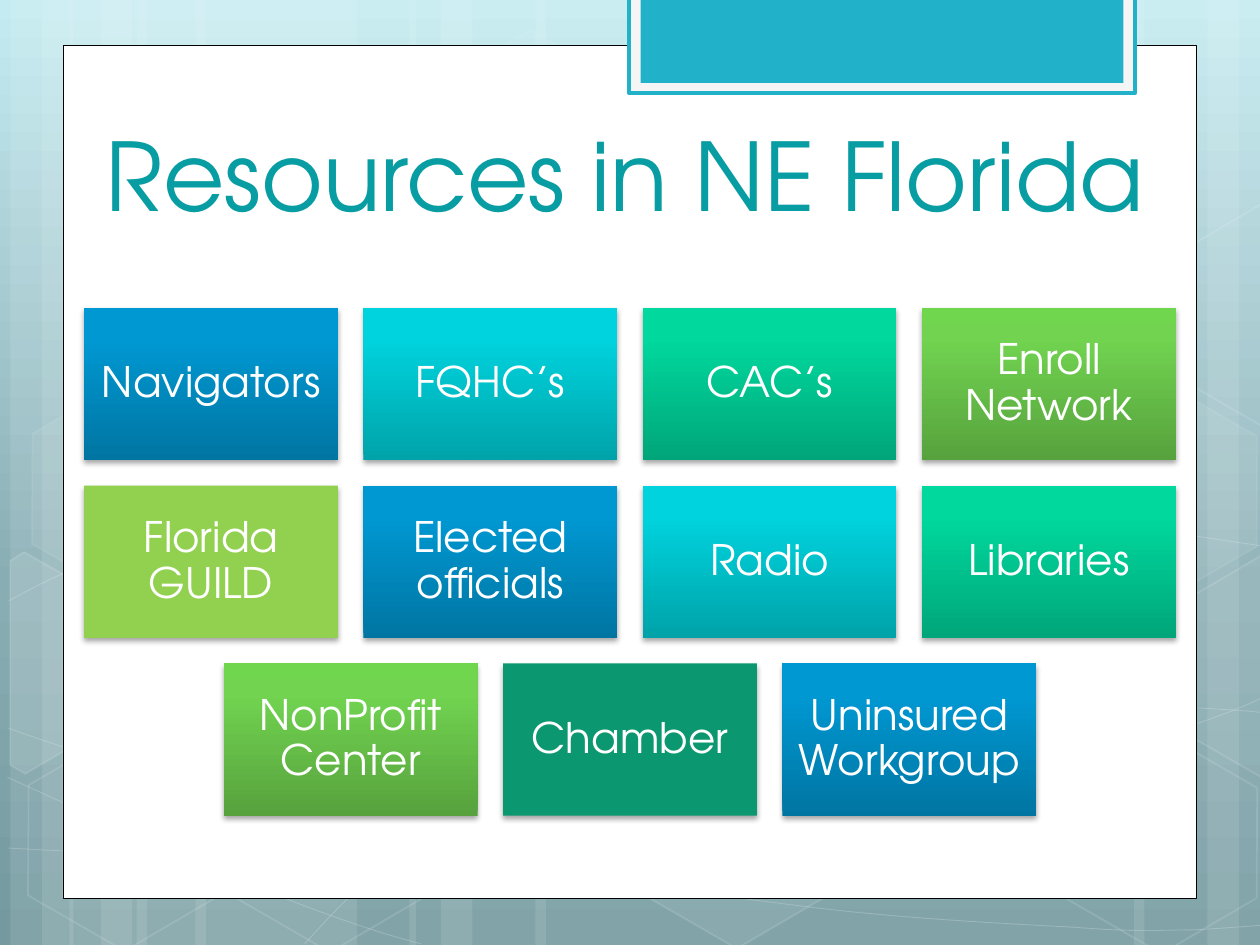
from itertools import cycle
from math import cos, radians, sin

from lxml import etree
from pptx import Presentation
from pptx.dml.color import RGBColor
from pptx.enum.shapes import MSO_SHAPE as Shape
from pptx.enum.text import MSO_ANCHOR as Anchor, PP_ALIGN as Align
from pptx.oxml.ns import qn
from pptx.util import Pt

WIDTH, HEIGHT = 720, 540
WHITE, CYAN, TITLE = "FFFFFF", "21B2C9", "089CA3"


def color(value):
    return RGBColor.from_string(value)


def set_alpha(element, percent):
    rgb = next(element.iter(qn("a:srgbClr")))
    etree.SubElement(rgb, qn("a:alpha"), val=str(percent * 1000))


def set_gradient(fill, host, stops, angle):
    """Replace the solid fill inside host with a linear gradient."""
    fill.solid()
    solid = next(host.iter(qn("a:solidFill")))
    gradient = etree.Element(qn("a:gradFill"), rotWithShape="1")
    stop_list = etree.SubElement(gradient, qn("a:gsLst"))
    for position, value in stops:
        stop = etree.SubElement(stop_list, qn("a:gs"), pos=str(position * 1000))
        etree.SubElement(stop, qn("a:srgbClr"), val=value)
    etree.SubElement(gradient, qn("a:lin"), ang=str(angle * 60000), scaled="0")
    solid.getparent().replace(solid, gradient)


def write_text(shape, text, size=24, ink=WHITE, font="TeX Gyre Adventor",
               anchor=Anchor.MIDDLE, inset=7.2, spacing=None):
    frame = shape.text_frame
    frame.word_wrap = True
    frame.vertical_anchor = anchor
    frame.margin_left = frame.margin_right = Pt(7.2)
    frame.margin_top = frame.margin_bottom = Pt(inset)
    paragraph = frame.paragraphs[0]
    paragraph.alignment = Align.CENTER
    paragraph.line_spacing = spacing
    run = paragraph.add_run()
    run.text = text
    run.font.size, run.font.name = Pt(size), font
    run.font.color.rgb = color(ink)


class SlideBuilder:
    def __init__(self, slide):
        self.slide = slide

    def style(self, shape, fill=None, alpha=None, line=None, weight=1, line_alpha=None):
        shape.shadow.inherit = False
        properties = shape.element.spPr
        if fill is None:
            shape.fill.background()
        else:
            shape.fill.solid()
            shape.fill.fore_color.rgb = color(fill)
            if alpha:
                set_alpha(properties, alpha)
        if line is None:
            shape.line.fill.background()
        else:
            shape.line.color.rgb = color(line)
            shape.line.width = Pt(weight)
            if line_alpha:
                set_alpha(properties.find(qn("a:ln")), line_alpha)
        return shape

    def background(self, stops, angle):
        set_gradient(self.slide.background.fill, self.slide.element, stops, angle)

    def box(self, left, top, width, height, kind=Shape.RECTANGLE, **look):
        shape = self.slide.shapes.add_shape(kind, Pt(left), Pt(top), Pt(width), Pt(height))
        return self.style(shape, **look)

    def hexagon(self, left, top, alpha, line_alpha):
        shape = self.box(left, top, 126, 109.4, Shape.HEXAGON, fill=WHITE if alpha else None,
                         alpha=alpha, line=WHITE, line_alpha=line_alpha)
        shape.adjustments[0] = 0.285
        shape.rotation = 30

    def outline(self, points, close=False, **look):
        first, *others = [(Pt(x), Pt(y)) for x, y in points]
        builder = self.slide.shapes.build_freeform(*first)
        builder.add_line_segments(others, close=close)
        return self.style(builder.convert_to_shape(), line=WHITE, **look)

    def curve(self, points):
        """Draw cubic curves: a start, then two handles and an end for each."""
        shape = self.outline(points, weight=0.5, line_alpha=20)
        outline = next(shape.element.iter(qn("a:path")))
        segments = outline.findall(qn("a:lnTo"))
        for index, segment in enumerate(segments):
            if index % 3 == 0:
                cubic = etree.SubElement(outline, qn("a:cubicBezTo"))
            cubic.append(segment[0])
            outline.remove(segment)

    def cut_hexagon(self, center, points, alpha=None):
        """Place a trimmed hexagon that is turned by 30 degrees, like the others."""
        cx, cy = center
        c, s = cos(radians(30)), sin(radians(30))
        upright = [(cx + (x - cx) * c + (y - cy) * s, cy - (x - cx) * s + (y - cy) * c)
                   for x, y in points]
        shape = self.outline(upright, close=True, fill=WHITE if alpha else None,
                             alpha=alpha, line_alpha=12)
        shape.rotation = 30

    def title(self, left, top, width, height, text):
        shape = self.slide.shapes.add_textbox(Pt(left), Pt(top), Pt(width), Pt(height))
        write_text(shape, text, size=54, ink=TITLE, anchor=Anchor.BOTTOM, inset=3.6)

    def tile(self, left, top, width, height, text, paint):
        shape = self.box(left, top, width, height, fill=paint[0])
        if len(paint) > 1:
            set_gradient(shape.fill, shape.element.spPr, zip((0, 80, 100), paint), 270)
        effects = shape.element.spPr.find(qn("a:effectLst"))
        shadow = etree.SubElement(effects, qn("a:outerShdw"), blurRad=str(Pt(3.1)),
                                  dist=str(Pt(1.8)), dir="5400000", rotWithShape="0")
        etree.SubElement(shadow, qn("a:srgbClr"), val="000000")
        set_alpha(shadow, 35)
        write_text(shape, text, spacing=0.9)


# Backdrop: left and width of the bands, curves, hexagons (left, top, fill and line alpha)
BANDS = [(78, 126), (6, 36), (24, 60), (111.6, 126), (39.6, 36), (57.6, 60),
         (528, 126), (690, 36), (648, 60), (306, 222), (234, 36), (252, 60)]
CURVES = [
    [(5, 484.6), (43.9, 486.7), (82.8, 488.9), (136.8, 488.2), (190.8, 487.4), (257.8, 486),
     (329.8, 478.8), (401.8, 471.6), (504, 457.9), (570.2, 444.2), (635.8, 430.6),
     (703.4, 409), (725, 396.7)],
    [(5, 343.4), (25.9, 331.9), (46.8, 321.1), (87.1, 310.3), (128.2, 299.5), (186.5, 283.7),
     (249.8, 278.6), (313.9, 273.6), (391.7, 272.9), (470.9, 278.6), (550.1, 284.4),
     (681.8, 306.7), (725, 312.5)],
    [(4.3, 444.2), (91.4, 483.8), (177.8, 523.4), (240.5, 539.3)],
    [(5, 416.2), (27.4, 424.1), (50.4, 432), (92.2, 443.5), (133.9, 454.3), (196.6, 472.3),
     (257, 484.6), (316.8, 496.8), (392.4, 509.8), (452.2, 517), (511.9, 524.9),
     (576, 527.8), (614.2, 529.9), (651.6, 532.8), (661.7, 531.4), (680.4, 531.4),
     (699.1, 530.6), (712.1, 529.2), (725, 528.5)],
    [(174.2, 539.3), (187.2, 524.9), (200.2, 510.5), (217.4, 497.5), (234.7, 484.6),
     (259.2, 470.2), (279.4, 460.1), (299.5, 450), (311.8, 445.7), (338.4, 438.5),
     (364.3, 431.3), (412.6, 421.2), (437.8, 416.2), (463.7, 411.1), (467.3, 411.1),
     (489.6, 409.7), (511.9, 407.5), (547.2, 405.4), (571.7, 404.6), (596.9, 403.9),
     (637.9, 404.6), (637.9, 404.6), (654, 404.6), (670, 404.6), (686.2, 404.6),
     (699.1, 405.4), (711.4, 406.1), (717.8, 406.8), (724.3, 407.5), (722.2, 406.8),
     (724.3, 407.5)],
]
HEXAGONS = [(240.5, 25.9, 4, 8), (357.8, 424.1, 6, 12), (7.9, 425.5, None, 12),
            (10.1, 224.6, 7, 8), (125.3, 426.2, None, 12), (542.2, 326.2, 10, 12),
            (600.5, 427, None, 12), (600.5, 226.1, 7, 8)]
LEFT_CUT = [(5.8, 320.4), (13.7, 315.4), (69.1, 347), (68.4, 410.4), (14.4, 442.1), (5.8, 437)]
RIGHT_CUT = [(666.7, 349.2), (720.7, 317.5), (726.5, 321.1), (726.5, 441.4), (721.4, 444.2),
             (666.7, 412.6)]
CUT_RISE = 200.9

# Tiles: rows of names and the colours they run through
ROWS = [["Navigators", "FQHC’s", "CAC’s", "Enroll Network"],
        ["Florida GUILD", "Elected officials", "Radio", "Libraries"],
        ["NonProfit Center", "Chamber", "Uninsured Workgroup"]]
PAINTS = [("0075A2", "0098D2", "0099D3"), ("00A3AA", "00D3DD", "00D4DE"),
          ("00A679", "00D89D", "00D99E"), ("57A23D", "71D350", "70D64E"), ("92D050",)]
SPECIAL_PAINTS = {"Chamber": ("0B976F",)}
TILE_WIDTH, TILE_HEIGHT, PITCH_X, PITCH_Y, TILES_TOP = 145, 87, 159.6, 101.6, 175.9


def main():
    presentation = Presentation()
    presentation.slide_width, presentation.slide_height = Pt(WIDTH), Pt(HEIGHT)
    builder = SlideBuilder(presentation.slides.add_slide(presentation.slide_layouts[6]))

    # Backdrop
    builder.background([(0, "C4EBF1"), (62, "88ADB3"), (100, "749AA0")], 90)
    for left, width in BANDS:
        builder.box(left, 0, width, HEIGHT, fill=WHITE, alpha=10)
    for curve in CURVES:
        builder.curve(curve)
    for hexagon in HEXAGONS:
        builder.hexagon(*hexagon)
    builder.cut_hexagon((25.9, 385.2), LEFT_CUT, alpha=10)
    builder.cut_hexagon((709.2, 374.4), RIGHT_CUT, alpha=4)
    builder.cut_hexagon((709.2, 374.4 - CUT_RISE), [(x, y - CUT_RISE) for x, y in RIGHT_CUT])

    # Page, tab and title
    builder.box(36, 26, 648, 487.2, fill=WHITE, line="000000", weight=0.5)
    builder.box(359.4, -1.4, 289.3, 54.6, fill="F5F5F5", line=CYAN, weight=2.25)
    builder.box(366, -1.4, 276, 48.8, fill=CYAN)
    builder.title(48.2, 60, 618, 75, "Resources in NE Florida")

    # Tiles, each row centred on the slide
    paints = cycle(PAINTS)
    for row, names in enumerate(ROWS):
        left = (WIDTH - TILE_WIDTH - (len(names) - 1) * PITCH_X) / 2
        for column, name in enumerate(names):
            paint = SPECIAL_PAINTS.get(name, next(paints))
            builder.tile(left + column * PITCH_X, TILES_TOP + row * PITCH_Y,
                         TILE_WIDTH, TILE_HEIGHT, name, paint)

    presentation.save("out.pptx")


if __name__ == "__main__":
    main()
